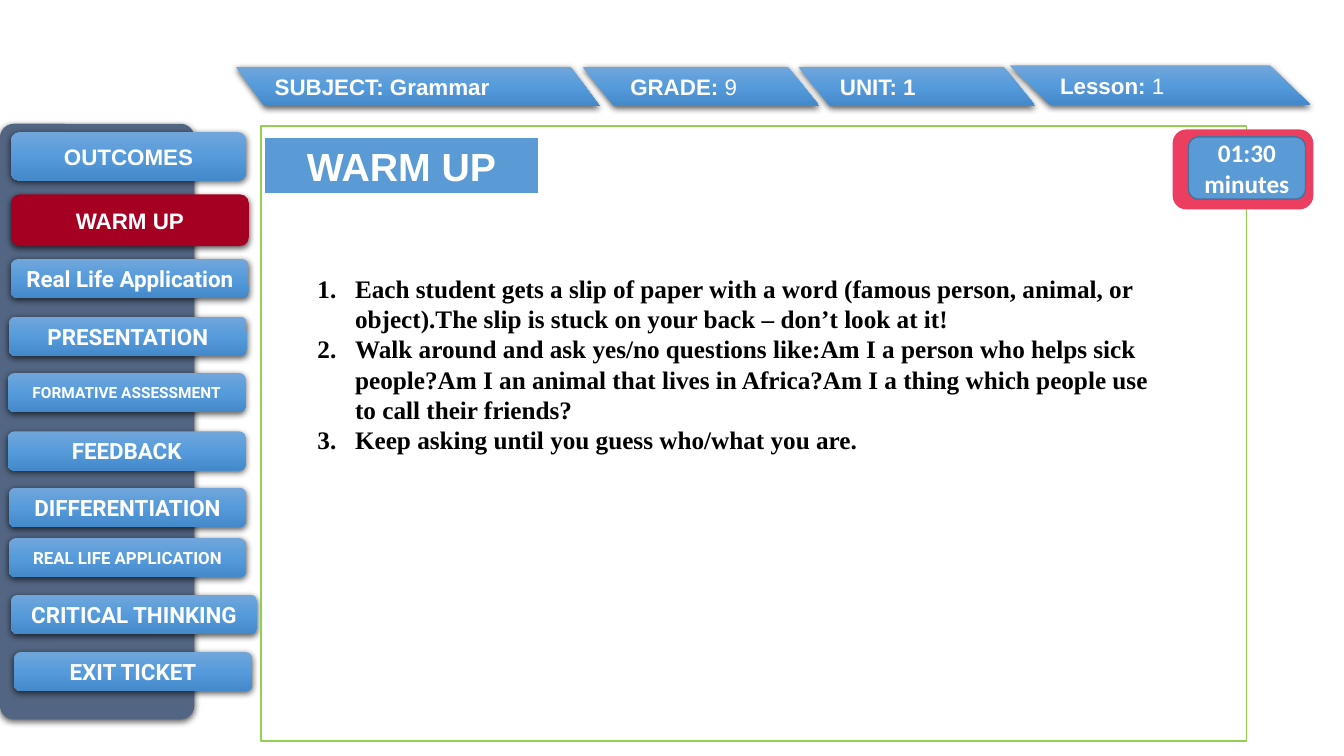
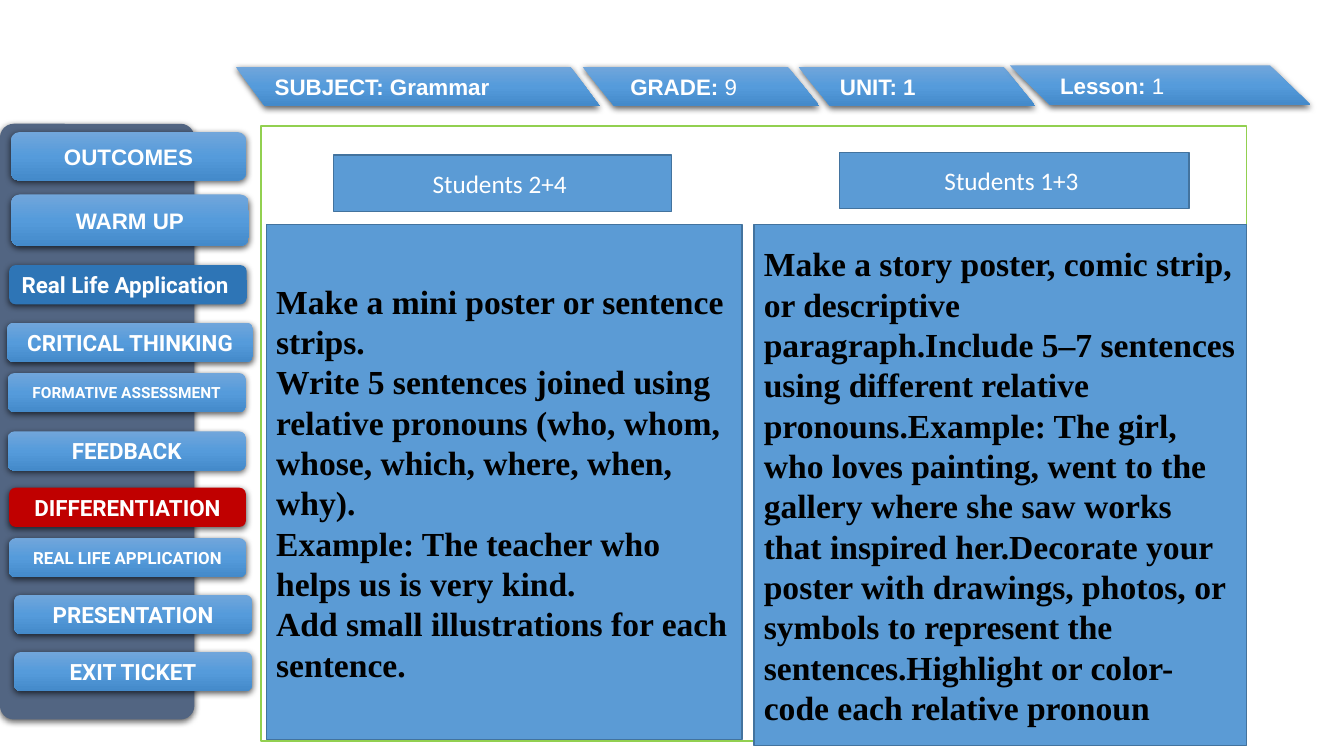
from collections import namedtuple

from pptx import Presentation
from pptx.dml.color import RGBColor
from pptx.enum.shapes import MSO_SHAPE
from pptx.enum.text import MSO_ANCHOR, PP_ALIGN
from pptx.oxml import parse_xml
from pptx.oxml.ns import nsdecls, qn
from pptx.util import Cm, Pt

RECTANGLE, ROUNDED, WAVE = MSO_SHAPE.RECTANGLE, MSO_SHAPE.ROUNDED_RECTANGLE, MSO_SHAPE.DOUBLE_WAVE
TOP, MIDDLE = MSO_ANCHOR.TOP, MSO_ANCHOR.MIDDLE
LEFT, CENTER = PP_ALIGN.LEFT, PP_ALIGN.CENTER

COLORS = {
    "white": "FFFFFF", "black": "000000", "sidebar": "526582", "frame": "92D050",
    "blue": "5B9BD5", "outline": "43739E", "dark_blue": "2E75B6",
    "crimson": "A50021", "red": "C00000", "pink": "EC3E5E",
    "glow_top": "71A6DB", "glow_middle": "559BDB", "glow_bottom": "448ACA",
}
Box = namedtuple("Box", "left top width height")
Button = namedtuple("Button", "label left top width height size font", defaults=(5.99, 0.99, 16, "Roboto"))

SIDEBAR = Box(0, 3.12, 4.9, 15.01)
HEADER = Box(5.94, 1.68, 27.08, 0.99)
FRAME = Box(6.58, 3.18, 24.84, 15.49)
TIMER = Box(29.57, 3.28, 3.51, 1.98)

TABS = [
    (14.18, 0, 5.97, 0.067, "UNIT: 1", ""),
    (8.74, 0, 5.97, 0.067, " GRADE: ", "9"),
    (0, 0, 9.17, 0.04, "SUBJECT: Grammar", ""),
    (19.51, -0.03, 7.57, 0.067, "Lesson: ", "1"),
]
SHARED_BUTTONS = [
    Button("OUTCOMES", 0.28, 0.21, 5.92, 1.22, font="Arial"),
    Button("WARM UP", 0.28, 1.78, height=1.3, font="Arial"),
    Button("FORMATIVE ASSESSMENT", 0.2, 6.28, size=11),
    Button("FEEDBACK", 0.2, 7.75),
    Button("DIFFERENTIATION", 0.23, 9.17, 5.97),
    Button("REAL LIFE APPLICATION", 0.23, 10.44, 5.97, size=12),
    Button("EXIT TICKET", 0.36, 13.31),
]
WARM_UP_BUTTONS = [
    Button("Real Life Application", 0.28, 3.41),
    Button("PRESENTATION", 0.23, 4.86),
    Button("CRITICAL THINKING", 0.28, 11.87, 6.2),
]
DIFFERENTIATION_BUTTONS = [
    Button("Real Life Application ", 0.23, 3.56),
    Button("CRITICAL THINKING", 0.18, 5.01, 6.2),
    Button("PRESENTATION", 0.36, 11.87),
]
WARM_UP_STEPS = [
    "Each student gets a slip of paper with a word (famous person, animal, or object)."
    "The slip is stuck on your back – don’t look at it!",
    "Walk around and ask yes/no questions like:Am I a person who helps sick people?"
    "Am I an animal that lives in Africa?Am I a thing which people use to call their friends?",
    "Keep asking until you guess who/what you are.",
]
TASKS = [
    ("Students 2+4 ", Box(1.83, 0.73, 8.51, 1.42), Box(0.13, 2.48, 11.99, 12.98), [
        "Make a mini poster or sentence strips.",
        "Write 5 sentences joined using relative pronouns (who, whom, whose, which, where, when, why).",
        "Example: The teacher who helps us is very kind.",
        "Add small illustrations for each sentence.",
    ]),
    ("Students 1+3 ", Box(14.58, 0.66, 8.81, 1.42), Box(12.42, 2.48, 12.42, 13.13), [
        "Make a story poster, comic strip, or descriptive paragraph."
        "Include 5–7 sentences using different relative pronouns."
        "Example: The girl, who loves painting, went to the gallery where she saw works "
        "that inspired her.Decorate your poster with drawings, photos, or symbols to "
        "represent the sentences.Highlight or color-code each relative pronoun",
    ]),
]


def color(name):
    """Return the named colour."""
    return RGBColor.from_string(COLORS[name])


def inside(outer, left, top, width, height):
    """Return a box whose position is measured from the corner of another."""
    return Box(outer.left + left, outer.top + top, width, height)


def add_box(shapes, kind, box, fill=None, line=None, line_width=1):
    """Add a preset shape with a plain fill and outline and no shadow."""
    shape = shapes.add_shape(kind, *map(Cm, box))
    shape.shadow.inherit = False
    if fill:
        shape.fill.solid()
        shape.fill.fore_color.rgb = color(fill)
    else:
        shape.fill.background()
    if line:
        shape.line.color.rgb = color(line)
        shape.line.width = Pt(line_width)
    else:
        shape.line.fill.background()
    return shape


def add_raised(shapes, kind, box, fill=None):
    """Add a shape with a soft shadow, in glossy blue unless a fill is named."""
    shape = add_box(shapes, kind, box, fill)
    properties = shape.element.spPr
    properties.find(qn("a:effectLst")).append(parse_xml(
        f'<a:outerShdw {nsdecls("a")} blurRad="57150" dist="19050" dir="5400000" algn="ctr" rotWithShape="0">'
        f'<a:srgbClr val="{COLORS["black"]}"><a:alpha val="63000"/></a:srgbClr></a:outerShdw>'))
    if not fill:
        stops = "".join(
            f'<a:gs pos="{position}"><a:srgbClr val="{COLORS[name]}"/></a:gs>'
            for position, name in ((0, "glow_top"), (50000, "glow_middle"), (100000, "glow_bottom")))
        properties.replace(properties.find(qn("a:noFill")), parse_xml(
            f'<a:gradFill {nsdecls("a")} rotWithShape="1"><a:gsLst>{stops}</a:gsLst>'
            '<a:lin ang="5400000" scaled="0"/></a:gradFill>'))
    return shape


def write(shape, texts, size, font, ink="white", bold=True, align=CENTER, anchor=MIDDLE):
    """Write one paragraph for each text and return the paragraphs."""
    frame = shape.text_frame
    frame.word_wrap = True
    frame.vertical_anchor = anchor
    for index, text in enumerate(texts):
        paragraph = frame.paragraphs[0] if index == 0 else frame.add_paragraph()
        paragraph.add_run().text = text
        paragraph.alignment = align
        paragraph.font.size = Pt(size)
        paragraph.font.name = font
        paragraph.font.bold = bold
        paragraph.font.color.rgb = color(ink)
    return frame.paragraphs


def add_sidebar(slide, box, buttons, highlights):
    """Draw the menu column, with some buttons in another colour."""
    panel = add_raised(slide.shapes, ROUNDED, box, "sidebar")
    panel.adjustments[0] = 0.071
    for button in buttons:
        place = inside(box, button.left, button.top, button.width, button.height)
        shape = add_raised(slide.shapes, ROUNDED, place, highlights.get(button.label))
        write(shape, [button.label], button.size, button.font)


def add_header(slide, box):
    """Draw the slanted tabs that describe the lesson."""
    for left, top, width, slant, label, value in TABS:
        tab = add_raised(slide.shapes, WAVE, inside(box, left, top, width, box.height))
        tab.adjustments[0] = 0
        tab.adjustments[1] = slant
        paragraph = write(tab, [label], 16, "Arial", align=LEFT)[0]
        if value:
            run = paragraph.add_run()
            run.text = value
            run.font.bold = False


def add_timer(slide, box, text):
    """Draw the time allowed as a badge of two grouped shapes."""
    group = slide.shapes.add_group_shape()
    add_box(group.shapes, ROUNDED, box, "pink", "pink")
    face = add_box(group.shapes, ROUNDED, inside(box, 0.38, 0.17, 2.95, 1.57), "blue", "outline")
    write(face, [text], 18, "Calibri")


def add_steps(slide, box, steps):
    """Write a numbered list."""
    text_box = slide.shapes.add_textbox(*map(Cm, box))
    for paragraph in write(text_box, steps, 18, "Times New Roman", "black", align=LEFT, anchor=TOP):
        properties = paragraph._p.get_or_add_pPr()
        properties.set("marL", str(Cm(0.95)))
        properties.set("indent", str(-Cm(0.95)))
        properties.insert_element_before(
            parse_xml(f'<a:buAutoNum {nsdecls("a")} type="arabicPeriod"/>'),
            "a:tabLst", "a:defRPr", "a:extLst")


def add_lesson_slide(presentation, buttons, highlights):
    """Add a slide with the menu, the tabs and the content frame."""
    slide = presentation.slides.add_slide(presentation.slide_layouts[6])
    add_sidebar(slide, SIDEBAR, SHARED_BUTTONS + buttons, highlights)
    add_header(slide, HEADER)
    add_box(slide.shapes, RECTANGLE, FRAME, line="frame")
    return slide


def add_warm_up(slide, box):
    """Fill the frame with the warm-up title and its steps."""
    title = add_box(slide.shapes, RECTANGLE, inside(box, 0.07, 0.27, 6.93, 1.45), "blue", "white", 1.5)
    write(title, ["WARM UP"], 28, "Arial", anchor=TOP)
    add_steps(slide, inside(box, 1.17, 3.58, 21.49, 4.88), WARM_UP_STEPS)


def add_tasks(slide, box):
    """Fill the frame with a heading and a task for each group of students."""
    for heading, heading_box, task_box, task in TASKS:
        panel = add_box(slide.shapes, RECTANGLE, inside(box, *task_box), "blue", "outline")
        write(panel, task, 24, "Times New Roman", "black", align=LEFT)
        label = add_box(slide.shapes, RECTANGLE, inside(box, *heading_box), "blue", "outline")
        write(label, [heading], 18, "Calibri", bold=False)


def main():
    """Build and save the presentation."""
    presentation = Presentation()
    presentation.slide_width, presentation.slide_height = Cm(33.87), Cm(19.05)
    warm_up = add_lesson_slide(presentation, WARM_UP_BUTTONS, {"WARM UP": "crimson"})
    add_warm_up(warm_up, FRAME)
    add_timer(warm_up, TIMER, "01:30 minutes")
    differentiation = add_lesson_slide(
        presentation, DIFFERENTIATION_BUTTONS,
        {"DIFFERENTIATION": "red", "Real Life Application ": "dark_blue"})
    add_tasks(differentiation, FRAME)
    presentation.save("out.pptx")


if __name__ == "__main__":
    main()
